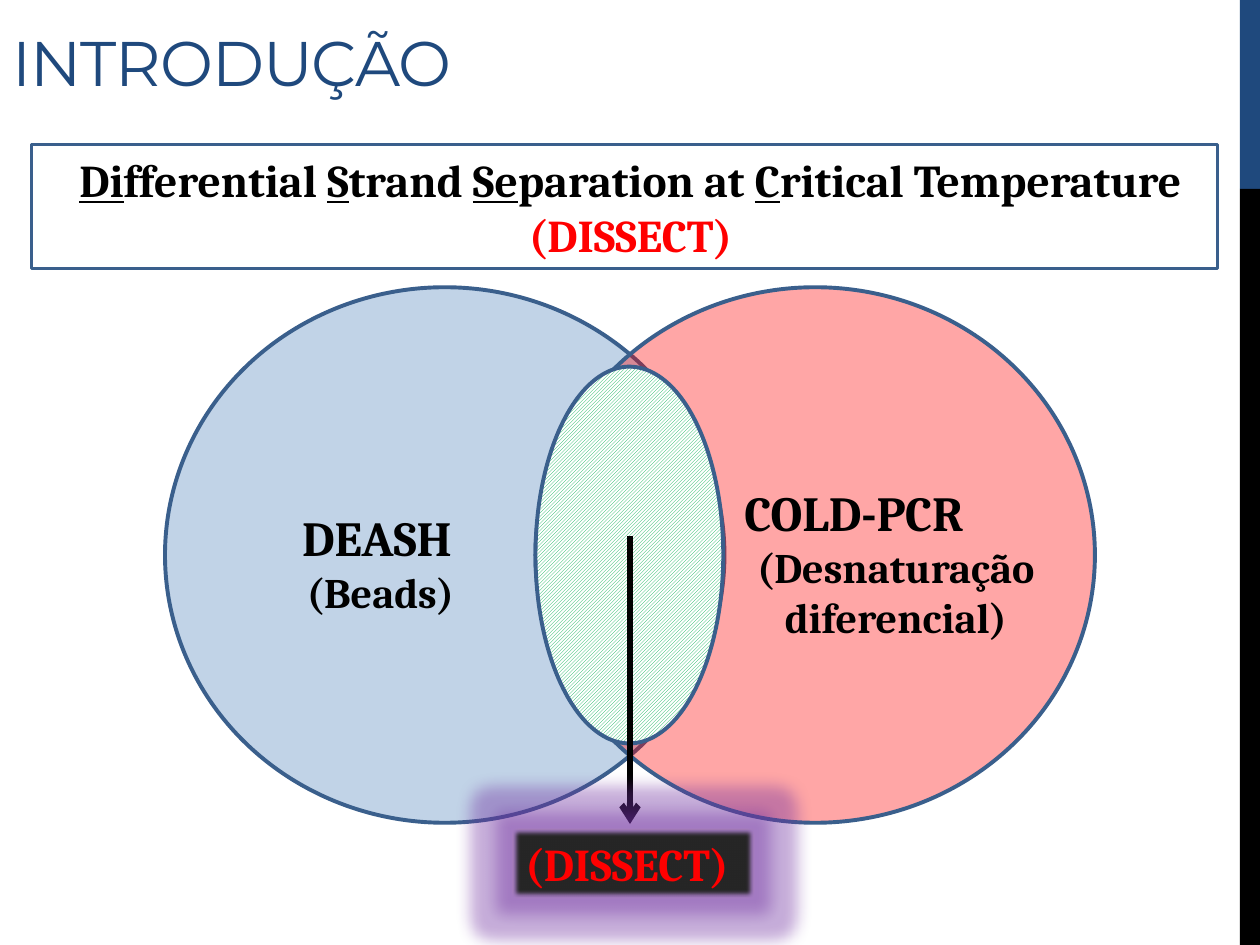
from lxml import etree
from pptx import Presentation
from pptx.dml.color import RGBColor
from pptx.enum import dml, shapes, text
from pptx.oxml import ns
from pptx.util import Inches, Pt

COLORS = {
    "navy": "1F497D", "black": "000000", "outline": "3A5F8C",
    "blue": "4F81BD", "red": "FF0000", "green": "00B050",
    "white": "FFFFFF", "dark": "262626", "gold": "FFC000",
    "purple": "7030A0",
}
SERIF = "Cambria"
CENTER = text.PP_ALIGN.CENTER
LEFT = text.PP_ALIGN.LEFT
RECT = shapes.MSO_SHAPE.RECTANGLE
OVAL = shapes.MSO_SHAPE.OVAL


def rgb(name):
    return RGBColor.from_string(COLORS[name])


def sub(parent, tag, **attributes):
    """Append a DrawingML child element."""
    return etree.SubElement(parent, ns.qn(f"a:{tag}"), **attributes)


def add_run(paragraph, words, size=26, font=SERIF, color="black", bold=True,
            underline=False):
    run = paragraph.add_run()
    run.text = words
    run.font.size = Pt(size)
    run.font.name = font
    run.font.bold = bold
    run.font.underline = underline
    run.font.color.rgb = rgb(color)
    return run


def add_figure(slide, kind, box, fill=None, alpha=None, line="outline",
               width=2.25):
    figure = slide.shapes.add_shape(kind, *map(Inches, box))
    figure.shadow.inherit = False
    if fill:
        figure.fill.solid()
        figure.fill.fore_color.rgb = rgb(fill)
    else:
        figure.fill.background()
    if alpha:
        color = figure.fill._xPr.find(".//" + ns.qn("a:srgbClr"))
        sub(color, "alpha", val=str(alpha * 1000))
    if line:
        figure.line.color.rgb = rgb(line)
        figure.line.width = Pt(width)
    else:
        figure.line.fill.background()
    return figure


def add_label(slide, box, name, detail):
    """Technique name with a centred explanation below it."""
    frame = slide.shapes.add_textbox(*map(Inches, box)).text_frame
    frame.word_wrap = True
    add_run(frame.paragraphs[0], name, size=28)
    explanation = frame.add_paragraph()
    explanation.alignment = CENTER
    add_run(explanation, detail, size=24)


def add_heading(slide):
    """Full name of the method, its initials underlined."""
    heading = add_figure(slide, RECT, (0.25, 1.15, 9.41, 0.98), width=1.75)
    frame = heading.text_frame
    frame.word_wrap = True
    paragraph = frame.paragraphs[0]
    paragraph.alignment = CENTER
    paragraph._p.get_or_add_pPr().set("marL", str(Inches(0.1)))
    for initial, rest in (("Di", "fferential "), ("S", "trand "),
                          ("Se", "paration at "),
                          ("C", "ritical Temperature ")):
        add_run(paragraph, initial, underline=True)
        add_run(paragraph, rest)
    add_run(paragraph, "(DISSECT)", color="red")


def add_arrow(slide, start, end):
    arrow = slide.shapes.add_connector(
        shapes.MSO_CONNECTOR.STRAIGHT, *map(Inches, start + end))
    arrow.line.color.rgb = rgb("black")
    arrow.line.width = Pt(3.5)
    sub(arrow.line._get_or_add_ln(), "tailEnd", type="arrow")
    sub(arrow._element.spPr, "effectLst")


def add_result(slide):
    """Glowing, soft-edged tag under the arrow."""
    tag = add_figure(slide, RECT, (4.07, 6.58, 1.91, 0.54), fill="dark",
                     line="gold", width=0.75)
    effects = tag._element.spPr.find(ns.qn("a:effectLst"))
    glow = sub(effects, "glow", rad=str(Pt(18)))
    sub(sub(glow, "srgbClr", val=COLORS["purple"]), "alpha", val="40000")
    sub(effects, "softEdge", rad=str(Pt(2.5)))
    frame = tag.text_frame
    frame.word_wrap = True
    frame.paragraphs[0].alignment = LEFT
    add_run(frame.paragraphs[0], "(DISSECT)", color="red")


def add_title(slide, words):
    title = slide.shapes.title
    title.left, title.top = Inches(0), Inches(0.11)
    title.width, title.height = Inches(9.8), Inches(0.73)
    frame = title.text_frame
    frame.vertical_anchor = text.MSO_ANCHOR.BOTTOM
    frame.paragraphs[0].alignment = LEFT
    run = add_run(frame.paragraphs[0], words, size=36, font="Montserrat",
                  color="navy", bold=False)
    run.font._element.set("spc", "-60")


def main():
    deck = Presentation()
    deck.slide_width, deck.slide_height = Inches(10), Inches(7.5)
    slide = deck.slides.add_slide(deck.slide_layouts[5])

    # Side band
    add_figure(slide, RECT, (9.84, 0, 0.16, 1.5), fill="navy", line=None)
    add_figure(slide, RECT, (9.84, 1.5, 0.16, 6), fill="black", line=None)

    # Title and method name
    add_title(slide, "INTRODUÇÃO")
    add_heading(slide)

    # Venn diagram
    for left, color in ((1.31, "blue"), (4.25, "red")):
        add_figure(slide, OVAL, (left, 2.28, 4.44, 4.25), fill=color, alpha=35)
    overlap = add_figure(slide, OVAL, (4.25, 2.91, 1.49, 2.99))
    overlap.fill.patterned()
    overlap.fill.pattern = dml.MSO_PATTERN.DARK_UPWARD_DIAGONAL
    overlap.fill.fore_color.rgb = rgb("green")
    overlap.fill.back_color.rgb = rgb("white")
    add_label(slide, (2.3, 3.98, 1.44, 0.98), "DEASH", "(Beads)")
    add_label(slide, (5.81, 3.78, 2.6, 1.38), "COLD-PCR",
              "(Desnaturação diferencial)")

    # Result of the overlap
    add_arrow(slide, (5, 4.25), (5, 6.54))
    add_result(slide)

    deck.save("out.pptx")


if __name__ == "__main__":
    main()
